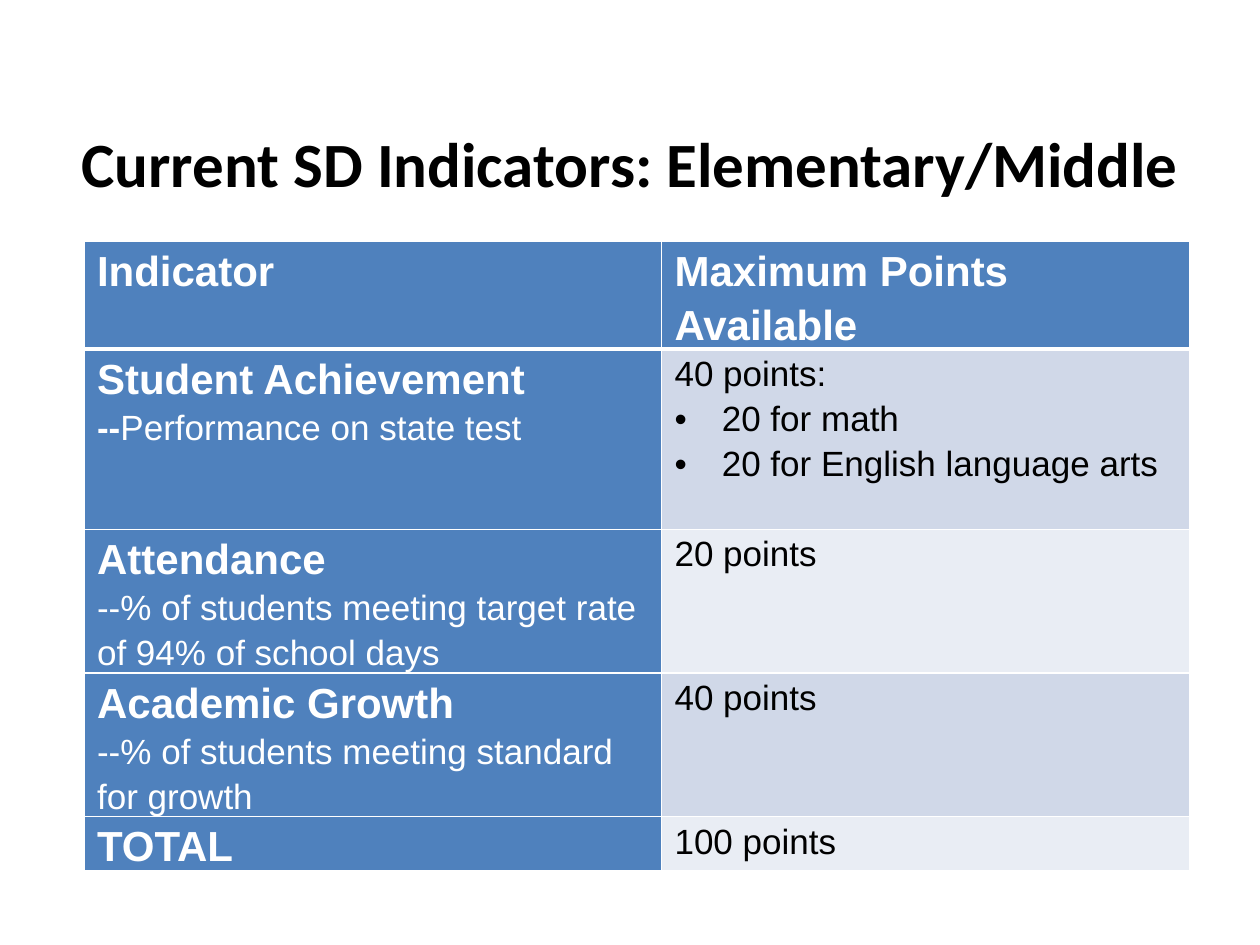
from lxml.etree import SubElement
from pptx import Presentation
from pptx.dml.color import RGBColor
from pptx.enum.text import MSO_ANCHOR, PP_ALIGN
from pptx.oxml.ns import qn
from pptx.util import Pt

BLACK = RGBColor(0x00, 0x00, 0x00)
WHITE = RGBColor(0xFF, 0xFF, 0xFF)
BLUE = RGBColor(0x4F, 0x81, 0xBD)
BAND_DARK = RGBColor(0xD0, 0xD8, 0xE8)
BAND_LIGHT = RGBColor(0xE9, 0xED, 0xF4)


def add_text(para, text, size=20, bold=False, color=BLACK, font="Arial", bullet=False):
    if bullet:
        properties = para._p.get_or_add_pPr()
        properties.set("marL", str(Pt(27)))
        properties.set("indent", str(-Pt(27)))
        SubElement(properties, qn("a:buFont"), typeface="Arial")
        SubElement(properties, qn("a:buChar"), char="•")
    span = para.add_run()
    span.text = text
    span.font.name = font
    span.font.size = Pt(size)
    span.font.bold = bold
    span.font.color.rgb = color


def set_borders(cell, bottom_width):
    properties = cell._tc.get_or_add_tcPr()
    widths = {"a:lnL": 1, "a:lnR": 1, "a:lnT": 1, "a:lnB": bottom_width}
    for position, (side, width) in enumerate(widths.items()):
        line = SubElement(properties, qn(side), w=str(Pt(width)))
        fill = SubElement(line, qn("a:solidFill"))
        SubElement(fill, qn("a:srgbClr"), val=str(WHITE))
        properties.insert(position, line)


deck = Presentation()
deck.slide_width, deck.slide_height = Pt(720), Pt(540)
page = deck.slides.add_slide(deck.slide_layouts[5])

title = page.shapes.title
title.left, title.top, title.width, title.height = Pt(36), Pt(48), Pt(648), Pt(90)
title.text_frame.vertical_anchor = MSO_ANCHOR.MIDDLE
title_para = title.text_frame.paragraphs[0]
title_para.alignment = PP_ALIGN.CENTER
add_text(title_para, "Current SD Indicators: Elementary/Middle", size=36, bold=True, font="Calibri")

heading = {"size": 24, "bold": True, "color": WHITE}
detail = {"color": WHITE}
bullet = {"bullet": True}

rows = [
    ([[("Indicator", heading)]],
     [[("Maximum Points Available", heading)]]),
    ([[("Student Achievement", heading)],
      [("--", {"bold": True, "color": WHITE}), ("Performance on state test", detail)]],
     [[("40 points:", {})],
      [("20 for math", bullet)],
      [("20 for English language arts", bullet)]]),
    ([[("Attendance", heading)],
      [("--% of students meeting target rate of 94% of school days", detail)]],
     [[("20 points", {})]]),
    ([[("Academic Growth", heading)],
      [("--% of students meeting standard for growth", detail)]],
     [[("40 points", {})]]),
    ([[("TOTAL", heading)]],
     [[("100 points", {})]]),
]
row_heights = [61, 103, 82, 82, 30]
column_widths = [330, 302]

indicators = page.shapes.add_table(
    len(rows), 2, Pt(48), Pt(138), Pt(sum(column_widths)), Pt(sum(row_heights))
).table
for column, width in zip(indicators.columns, column_widths):
    column.width = Pt(width)

for row_index, (row, height) in enumerate(zip(rows, row_heights)):
    indicators.rows[row_index].height = Pt(height)
    for column_index, paragraphs in enumerate(row):
        cell = indicators.cell(row_index, column_index)
        cell.margin_left = cell.margin_right = Pt(7.5)
        cell.margin_top = cell.margin_bottom = Pt(0)
        cell.fill.solid()
        if row_index == 0 or column_index == 0:
            cell.fill.fore_color.rgb = BLUE
        else:
            cell.fill.fore_color.rgb = BAND_DARK if row_index % 2 else BAND_LIGHT
        set_borders(cell, bottom_width=3 if row_index == 0 else 1)
        frame = cell.text_frame
        for para_index, spans in enumerate(paragraphs):
            para = frame.add_paragraph() if para_index else frame.paragraphs[0]
            para.line_spacing = 1.15
            for text, style in spans:
                add_text(para, text, **style)

deck.save("out.pptx")
